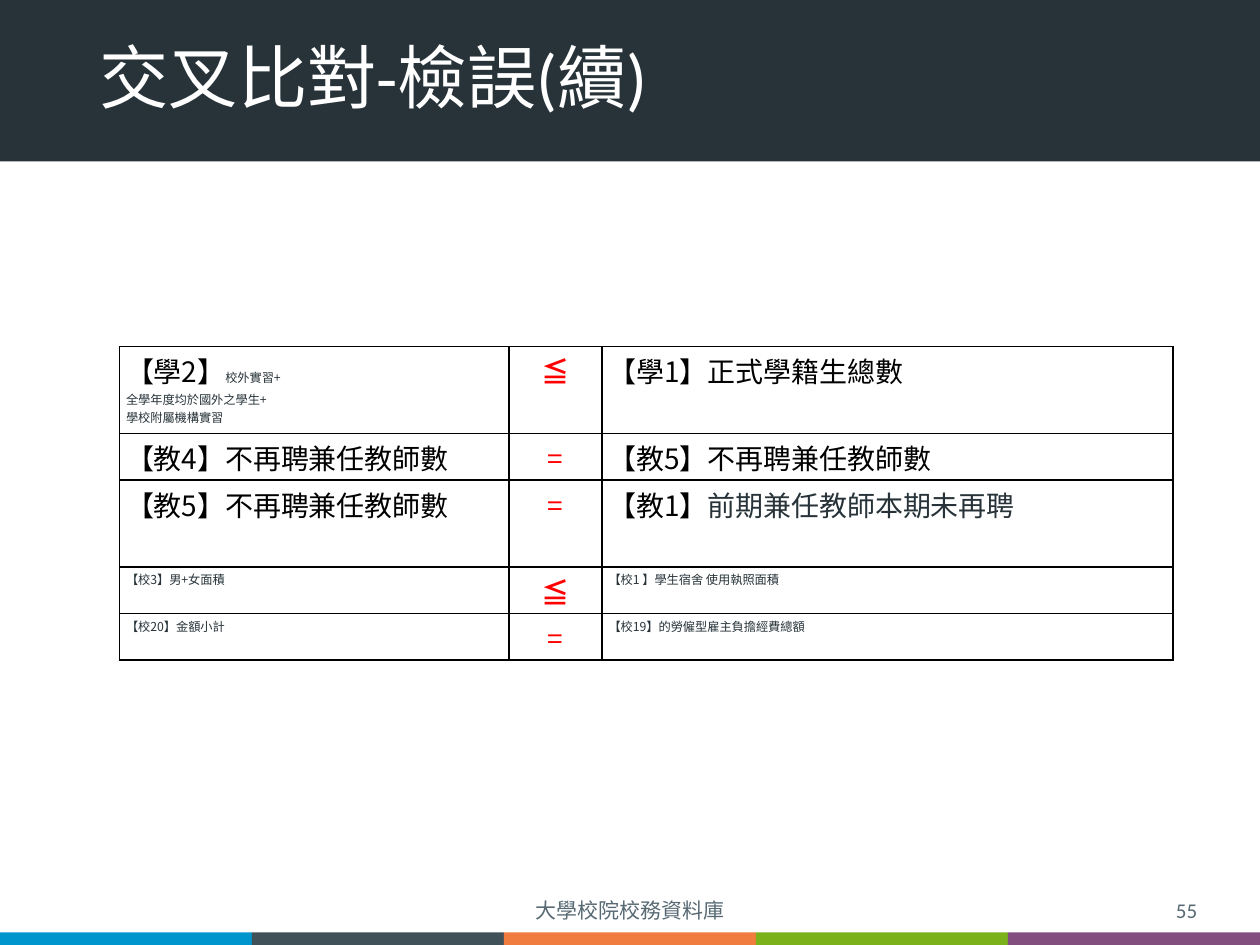
from lxml.etree import SubElement
from pptx import Presentation
from pptx.dml.color import RGBColor
from pptx.enum.shapes import MSO_SHAPE
from pptx.enum.text import MSO_ANCHOR, MSO_AUTO_SIZE, PP_ALIGN
from pptx.oxml.ns import qn
from pptx.util import Inches, Pt

DARK, BLACK, RED, WHITE, GREY = "273339", "000000", "FF0000", "FFFFFF", "576973"
BAND_COLORS = ["0095CD", "40515A", "F17C3F", "7BB21B", "814E7E"]
COLUMN_WIDTHS = [3.09, 0.74, 4.53]
ROW_HEIGHTS = [0.69, 0.37, 0.69, 0.37, 0.37]


def large(text, color=BLACK):
    """Describe a run of main text."""
    return text, 16, color


def small(text):
    """Describe a run of detail text."""
    return text, 7, DARK


CHECKS = [
    ([[large("【學2】"), small("校外實習+")],
      [small("全學年度均於國外之學生+")],
      [small("學校附屬機構實習")]],
     "≦", [[large("【學1】正式學籍生總數")]]),
    ([[large("【教4】不再聘兼任教師數")]],
     "=", [[large("【教5】不再聘兼任教師數")]]),
    ([[large("【教5】不再聘兼任教師數")]],
     "=", [[large("【教1】"), large("前期兼任教師本期未再聘", DARK)]]),
    ([[small("【校3】男+女面積")]],
     "≦", [[small("【校1 】學生宿舍 使用執照面積")]]),
    ([[small("【校20】金額小計")]],
     "=", [[small("【校19】的勞僱型雇主負擔經費總額")]]),
]


def rgb(color):
    """Turn a hex string into a colour."""
    return RGBColor.from_string(color)


def style_font(font, name, size, color, bold=False):
    """Set the look of a font."""
    font.name, font.size, font.bold = name, Pt(size), bold
    font.color.rgb = rgb(color)


def place(shape, left, top, width, height):
    """Move and size a shape, in inches."""
    shape.left, shape.top = Inches(left), Inches(top)
    shape.width, shape.height = Inches(width), Inches(height)


def add_band(slide, left, top, width, height, color):
    """Add a plain filled rectangle."""
    band = slide.shapes.add_shape(
        MSO_SHAPE.RECTANGLE, Inches(left), Inches(top), Inches(width), Inches(height))
    band.shadow.inherit = False
    band.fill.solid()
    band.fill.fore_color.rgb = rgb(color)
    band.line.fill.background()


def set_title(slide, text):
    """Fill the title placeholder and bring it in front of the header."""
    title = slide.shapes.title
    slide.shapes.element.append(title.element)
    place(title, 0.69, 0.27, 8.62, 0.74)
    frame = title.text_frame
    frame.text = text
    frame.auto_size = MSO_AUTO_SIZE.NONE
    frame.vertical_anchor = MSO_ANCHOR.MIDDLE
    paragraph = frame.paragraphs[0]
    paragraph.alignment, paragraph.line_spacing = PP_ALIGN.LEFT, 0.9
    style_font(paragraph.font, "Calibri", 39.6, WHITE)


def add_footer(slide, text, left, width, alignment):
    """Add a footer text box."""
    box = slide.shapes.add_textbox(
        Inches(left), Inches(7.07), Inches(width), Inches(0.31))
    frame = box.text_frame
    frame.word_wrap = True
    frame.vertical_anchor = MSO_ANCHOR.MIDDLE
    frame.text = text
    paragraph = frame.paragraphs[0]
    paragraph.alignment = alignment
    style_font(paragraph.font, "Calibri", 12, GREY)


def set_borders(cell):
    """Draw a thin black line on each side of a cell."""
    properties = cell._tc.get_or_add_tcPr()
    for side in ("a:lnL", "a:lnR", "a:lnT", "a:lnB"):
        line = SubElement(properties, qn(side), w=str(Pt(1)))
        fill = SubElement(line, qn("a:solidFill"))
        SubElement(fill, qn("a:srgbClr"), val=BLACK)


def fill_cell(cell, paragraphs, alignment=PP_ALIGN.LEFT, bold=False):
    """Write paragraphs of runs into a bordered cell."""
    cell.margin_left = cell.margin_right = Inches(0.05)
    cell.margin_top = cell.margin_bottom = Inches(0.03)
    set_borders(cell)
    cell.fill.background()
    frame = cell.text_frame
    for index, runs in enumerate(paragraphs):
        paragraph = frame.add_paragraph() if index else frame.paragraphs[0]
        paragraph.alignment = alignment
        for text, size, color in runs:
            run = paragraph.add_run()
            run.text = text
            style_font(run.font, "Noto Sans CJK SC", size, color, bold)


def add_check_table(slide):
    """Add the table of cross-checks."""
    table = slide.shapes.add_table(
        len(CHECKS), len(COLUMN_WIDTHS), Inches(0.95), Inches(2.75),
        Inches(sum(COLUMN_WIDTHS)), Inches(sum(ROW_HEIGHTS))).table
    table.first_row = table.horz_banding = False
    for column, width in zip(table.columns, COLUMN_WIDTHS):
        column.width = Inches(width)
    for row, height, (left, sign, right) in zip(table.rows, ROW_HEIGHTS, CHECKS):
        row.height = Inches(height)
        left_cell, sign_cell, right_cell = row.cells
        fill_cell(left_cell, left)
        fill_cell(sign_cell, [[large(sign, RED)]], PP_ALIGN.CENTER, sign == "≦")
        fill_cell(right_cell, right)


def main():
    """Build the slide and save it."""
    presentation = Presentation()
    presentation.slide_width, presentation.slide_height = Inches(10), Inches(7.5)
    slide = presentation.slides.add_slide(presentation.slide_layouts[5])
    add_band(slide, 0, -0.01, 10, 1.29, DARK)
    for index, color in enumerate(BAND_COLORS):
        add_band(slide, 2 * index, 7.4, 2, 0.1, color)
    set_title(slide, "交叉比對-檢誤(續)")
    add_footer(slide, "大學校院校務資料庫", 3.31, 3.38, PP_ALIGN.CENTER)
    add_footer(slide, "55", 7.35, 2.25, PP_ALIGN.RIGHT)
    add_check_table(slide)
    presentation.save("out.pptx")


if __name__ == "__main__":
    main()
